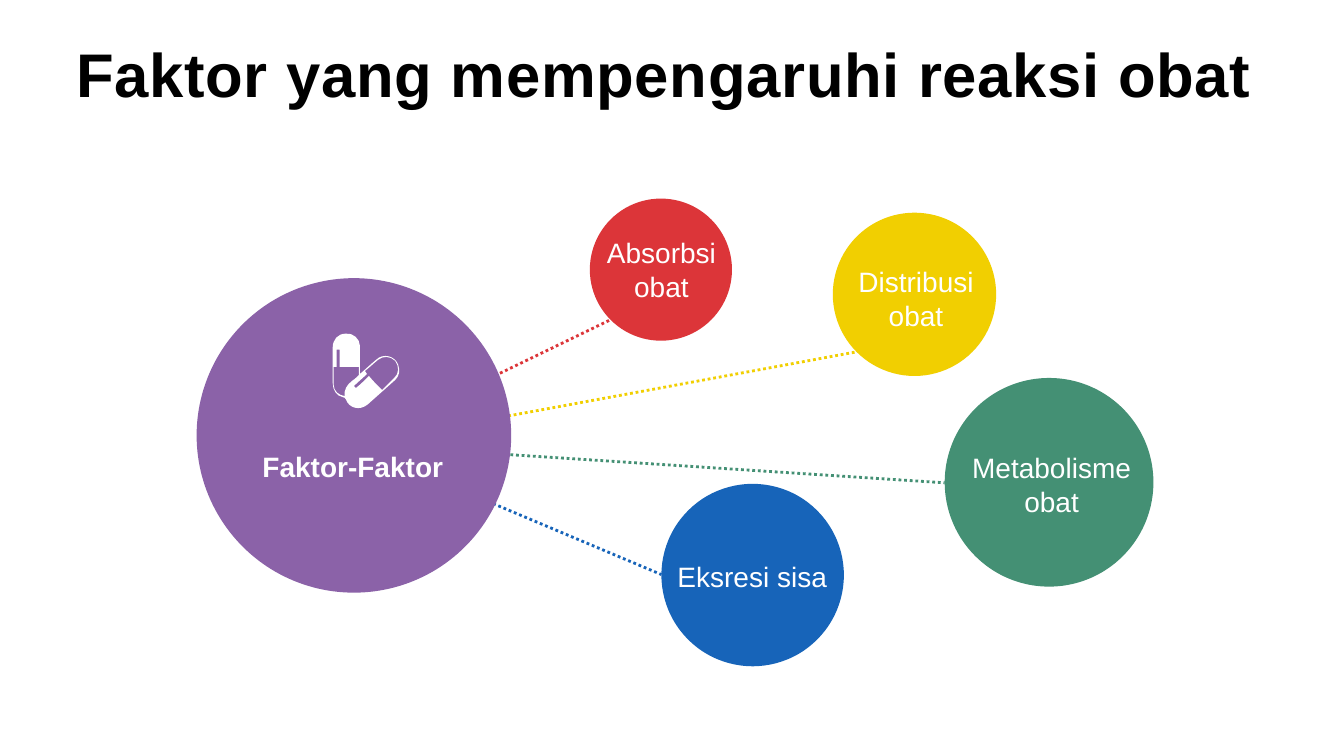
from dataclasses import dataclass

from lxml.etree import SubElement
from pptx import Presentation
from pptx.dml.color import RGBColor
from pptx.enum.dml import MSO_LINE
from pptx.enum.shapes import MSO_CONNECTOR, MSO_SHAPE
from pptx.enum.text import MSO_ANCHOR, MSO_AUTO_SIZE, PP_ALIGN
from pptx.oxml.ns import qn
from pptx.shapes.autoshape import Shape
from pptx.slide import Slide
from pptx.text.text import TextFrame
from pptx.util import Inches, Pt

COLORS = {
    "black": "000000",
    "white": "FFFFFF",
    "purple": "8B62A8",
    "blue": "1764B9",
    "yellow": "F1CF01",
    "red": "DC3539",
    "green": "449074",
}
TITLE_FONT = {"name": "Arial", "size": Pt(44), "bold": True}
HUB_FONT = {"name": "Arial", "size": Pt(20), "bold": True}
FACTOR_FONT = {"name": "Arial", "size": Pt(20), "bold": False}
TITLE_PARAGRAPH = {"alignment": PP_ALIGN.CENTER, "line_spacing": 0.9, "space_before": Pt(10)}
LABEL_PARAGRAPH = {"alignment": PP_ALIGN.CENTER}
TITLE_FRAME = {
    "word_wrap": True,
    "auto_size": MSO_AUTO_SIZE.NONE,
    "vertical_anchor": MSO_ANCHOR.MIDDLE,
}
FACTOR_FRAME = {"word_wrap": True, "auto_size": MSO_AUTO_SIZE.SHAPE_TO_FIT_TEXT}
HUB_FRAME = FACTOR_FRAME | {"vertical_anchor": MSO_ANCHOR.MIDDLE}
LINK_ORIGIN = (3.5, 4.41)

Point = tuple[float, float]
Box = tuple[float, float, float, float]


@dataclass(frozen=True)
class Bubble:
    text: str
    color: str
    left: float
    top: float
    diameter: float
    label: Box


@dataclass(frozen=True)
class Factor(Bubble):
    link_end: Point


HUB = Bubble("Faktor-Faktor", "purple", 1.95, 2.76, 3.12, (2.42, 4.41, 2.16, 0.44))
FACTORS = [
    Factor("Eksresi sisa", "blue", 6.56, 4.8, 1.81, (6.52, 5.5, 1.88, 0.44), (6.56, 5.7)),
    Factor("Distribusi obat", "yellow", 8.26, 2.11, 1.62, (8.38, 2.58, 1.41, 0.77), (8.5, 3.49)),
    Factor("Absorbsi obat", "red", 5.85, 1.97, 1.41, (5.92, 2.29, 1.28, 0.77), (6.06, 3.17)),
    Factor("Metabolisme obat", "green", 9.37, 3.75, 2.07, (9.49, 4.42, 1.88, 0.77), (9.37, 4.79)),
]

PILLS_OUTLINE = [
    (3.57, 3.71), (3.63, 3.66), (3.68, 3.61), (3.73, 3.57), (3.8, 3.5), (3.92, 3.53),
    (3.95, 3.62), (3.97, 3.68), (3.96, 3.73), (3.92, 3.77), (3.83, 3.85), (3.74, 3.93),
    (3.65, 4.01), (3.57, 4.08), (3.46, 4.05), (3.43, 3.96), (3.42, 3.95), (3.42, 3.94),
    (3.4, 3.94), (3.34, 3.93), (3.3, 3.87), (3.3, 3.8), (3.3, 3.69), (3.3, 3.57),
    (3.3, 3.45), (3.3, 3.37), (3.35, 3.31), (3.43, 3.31), (3.5, 3.3), (3.57, 3.36),
    (3.57, 3.43), (3.57, 3.51), (3.57, 3.58), (3.57, 3.65), (3.57, 3.67), (3.57, 3.69),
    (3.57, 3.71),
]
TILTED_PILL_HOLLOW = [
    (3.64, 3.71), (3.6, 3.75), (3.55, 3.79), (3.51, 3.83), (3.52, 3.84), (3.52, 3.84),
    (3.53, 3.85), (3.58, 3.81), (3.62, 3.77), (3.66, 3.73), (3.7, 3.78), (3.74, 3.82),
    (3.79, 3.87), (3.83, 3.83), (3.87, 3.79), (3.91, 3.75), (3.96, 3.71), (3.96, 3.63),
    (3.92, 3.58), (3.87, 3.53), (3.8, 3.53), (3.75, 3.57), (3.7, 3.61), (3.66, 3.65),
    (3.62, 3.68), (3.63, 3.69), (3.63, 3.7), (3.64, 3.71),
]
UPRIGHT_PILL_HOLLOW = [
    (3.31, 3.64), (3.31, 3.7), (3.31, 3.76), (3.31, 3.82), (3.31, 3.88), (3.36, 3.92),
    (3.42, 3.93), (3.41, 3.87), (3.44, 3.82), (3.49, 3.78), (3.51, 3.77), (3.53, 3.75),
    (3.55, 3.73), (3.55, 3.73), (3.56, 3.72), (3.56, 3.72), (3.56, 3.69), (3.56, 3.67),
    (3.56, 3.64), (3.5, 3.64), (3.44, 3.64), (3.37, 3.64), (3.37, 3.58), (3.37, 3.52),
    (3.37, 3.47), (3.36, 3.47), (3.35, 3.47), (3.34, 3.47), (3.34, 3.53), (3.34, 3.58),
    (3.34, 3.64), (3.33, 3.64), (3.32, 3.64), (3.31, 3.64),
]


def rgb(color: str) -> RGBColor:
    return RGBColor.from_string(COLORS[color])


def apply_format(target: object, values: dict) -> None:
    for attribute, value in values.items():
        setattr(target, attribute, value)


def write_text(
    frame: TextFrame, text: str, color: str, font: dict, paragraph_format: dict, frame_format: dict
) -> None:
    apply_format(frame, frame_format)
    paragraph = frame.paragraphs[0]
    apply_format(paragraph, paragraph_format)
    run = paragraph.add_run()
    run.text = text
    apply_format(run.font, font)
    run.font.color.rgb = rgb(color)


def paint(shape: Shape, color: str) -> None:
    shape.shadow.inherit = False
    shape.fill.solid()
    shape.fill.fore_color.rgb = rgb(color)
    shape.line.fill.background()


def add_title(slide: Slide, text: str) -> None:
    title = slide.shapes.title
    place = {"left": 0.35, "top": 0.37, "width": 12.66, "height": 0.79}
    apply_format(title, {side: Inches(length) for side, length in place.items()})
    write_text(title.text_frame, text, "black", TITLE_FONT, TITLE_PARAGRAPH, TITLE_FRAME)
    title.text_frame.paragraphs[0].runs[0].font._element.set("spc", "50")


def add_link(slide: Slide, factor: Factor) -> None:
    ends = [Inches(length) for length in LINK_ORIGIN + factor.link_end]
    link = slide.shapes.add_connector(MSO_CONNECTOR.STRAIGHT, *ends)
    link.line.color.rgb = rgb(factor.color)
    apply_format(link.line, {"width": Pt(2), "dash_style": MSO_LINE.ROUND_DOT})
    SubElement(link._element.spPr, qn("a:effectLst"))


def add_circle(slide: Slide, bubble: Bubble) -> None:
    box = (bubble.left, bubble.top, bubble.diameter, bubble.diameter)
    circle = slide.shapes.add_shape(MSO_SHAPE.OVAL, *[Inches(length) for length in box])
    paint(circle, bubble.color)


def add_label(slide: Slide, bubble: Bubble, font: dict, frame_format: dict) -> None:
    label = slide.shapes.add_textbox(*[Inches(length) for length in bubble.label])
    write_text(label.text_frame, bubble.text, "white", font, LABEL_PARAGRAPH, frame_format)


def bend_segments(shape: Shape) -> None:
    segments = list(shape._element.iter(qn("a:lnTo")))
    for first in range(0, len(segments), 3):
        curve, *merged = segments[first:first + 3]
        curve.tag = qn("a:cubicBezTo")
        for segment in merged:
            curve.append(segment[0])
            segment.getparent().remove(segment)


def add_pills(slide: Slide) -> None:
    outline, *hollows = [
        [(Inches(x), Inches(y)) for x, y in contour]
        for contour in (PILLS_OUTLINE, TILTED_PILL_HOLLOW, UPRIGHT_PILL_HOLLOW)
    ]
    builder = slide.shapes.build_freeform(*outline[0])
    builder.add_line_segments(outline[1:], close=True)
    for hollow in hollows:
        builder.move_to(*hollow[0])
        builder.add_line_segments(hollow[1:], close=True)
    pills = builder.convert_to_shape()
    bend_segments(pills)
    paint(pills, "white")


def main() -> None:
    presentation = Presentation()
    apply_format(presentation, {"slide_width": Inches(13.33), "slide_height": Inches(7.5)})
    slide = presentation.slides.add_slide(presentation.slide_layouts.get_by_name("Title Only"))
    add_title(slide, "Faktor yang mempengaruhi reaksi obat ")
    for factor in FACTORS:
        add_link(slide, factor)
    for bubble in (HUB, *FACTORS):
        add_circle(slide, bubble)
    add_label(slide, HUB, HUB_FONT, HUB_FRAME)
    for factor in FACTORS:
        add_label(slide, factor, FACTOR_FONT, FACTOR_FRAME)
    add_pills(slide)
    presentation.save("out.pptx")


if __name__ == "__main__":
    main()
